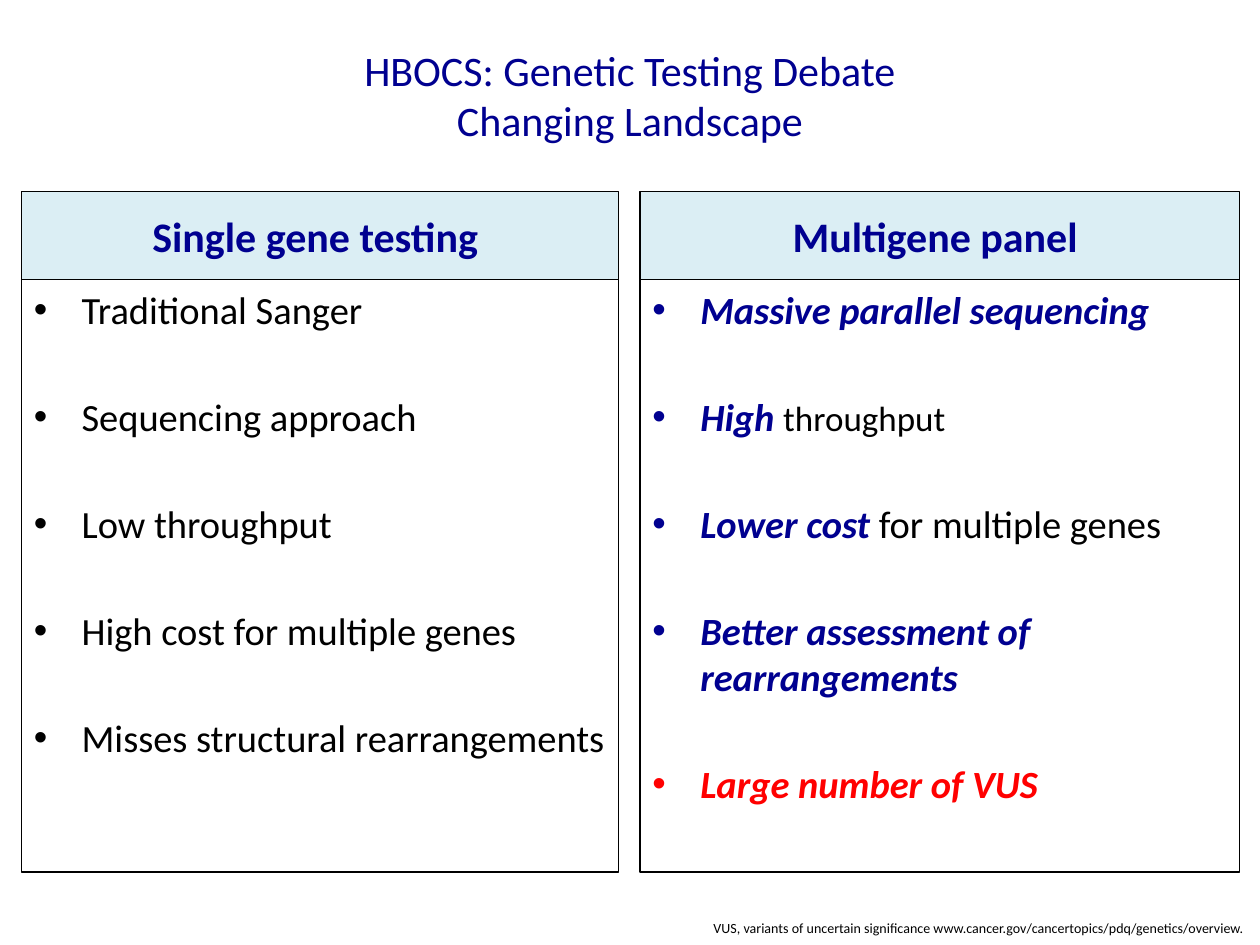
from dataclasses import dataclass

from lxml.etree import SubElement
from pptx import Presentation
from pptx.dml.color import RGBColor
from pptx.enum.shapes import MSO_SHAPE
from pptx.enum.text import MSO_ANCHOR, PP_ALIGN
from pptx.oxml.ns import qn
from pptx.util import Emu, Inches, Pt

NAVY, BLACK, RED, PALE = "000090", "000000", "FF0000", "DBEEF4"
FONT = "Calibri"
INDENT = Inches(0.38)
BULLET_GAP = Pt(34.8)


@dataclass(frozen=True)
class Area:
    """A rectangle in percent of the slide's width and height."""
    left: float
    top: float
    width: float
    height: float


@dataclass(frozen=True)
class Span:
    text: str
    color: str = BLACK
    size: float = 22
    strong: bool = False


@dataclass(frozen=True)
class Column:
    heading: str
    left: float
    width: float
    bullets: tuple[tuple[Span, ...], ...]


def strong(text: str, color: str = NAVY) -> Span:
    return Span(text, color, strong=True)


COLUMNS = (
    Column("Single gene testing ", 1.7, 47.4, (
        (Span("Traditional Sanger"),),
        (Span("Sequencing approach"),),
        (Span("Low throughput"),),
        (Span("High cost for multiple genes"),),
        (Span("Misses structural rearrangements"),),
    )),
    Column("Multigene panel ", 50.8, 47.6, (
        (strong("Massive parallel sequencing"),),
        (strong("High "), Span("throughput", size=20)),
        (strong("Lower cost "), Span("for multiple genes")),
        (strong("Better assessment of rearrangements"),),
        (strong("Large number of VUS", RED),),
    )),
)
HEADING_TOP, HEADING_HEIGHT, BODY_HEIGHT = 20.27, 9.33, 62.67

deck = Presentation()
deck.slide_width, deck.slide_height = Inches(10), Inches(7.5)
page = deck.slides.add_slide(deck.slide_layouts[6])


def rgb(color: str) -> RGBColor:
    return RGBColor.from_string(color)


def place(area: Area) -> tuple[Emu, ...]:
    across, down = deck.slide_width / 100, deck.slide_height / 100
    return (Emu(round(area.left * across)), Emu(round(area.top * down)),
            Emu(round(area.width * across)), Emu(round(area.height * down)))


def style(font, size: float, color: str, bold: bool = False, italic: bool = False) -> None:
    font.name, font.size, font.bold, font.italic = FONT, Pt(size), bold, italic
    font.color.rgb = rgb(color)


def add_line(box, text: str, size: float, color: str, align: PP_ALIGN, bold: bool = False) -> None:
    para = box.text_frame.paragraphs[0]
    para.text, para.alignment = text, align
    style(para.font, size, color, bold)


def add_text(area: Area, anchor: MSO_ANCHOR):
    box = page.shapes.add_textbox(*place(area))
    box.text_frame.word_wrap = True
    box.text_frame.vertical_anchor = anchor
    return box


def add_panel(area: Area, anchor: MSO_ANCHOR, fill: str | None = None):
    box = page.shapes.add_shape(MSO_SHAPE.RECTANGLE, *place(area))
    box.shadow.inherit = False
    if fill:
        box.fill.solid()
        box.fill.fore_color.rgb = rgb(fill)
    else:
        box.fill.background()
    box.line.color.rgb = rgb(BLACK)
    box.line.width = Pt(0.75)
    box.text_frame.word_wrap = True
    box.text_frame.vertical_anchor = anchor
    return box


def add_bullet(para, spans: tuple[Span, ...]) -> None:
    props = para._p.get_or_add_pPr()
    props.set("marL", str(INDENT))
    props.set("indent", str(-INDENT))
    bullet_color = SubElement(props, qn("a:buClr"))
    SubElement(bullet_color, qn("a:srgbClr"), val=spans[0].color)
    SubElement(props, qn("a:buFont"), typeface="Arial")
    SubElement(props, qn("a:buChar"), char="•")
    para.alignment = PP_ALIGN.LEFT
    for span in spans:
        run = para.add_run()
        run.text = span.text
        font = para.font if len(spans) == 1 else run.font
        style(font, span.size, span.color, span.strong, span.strong)


def add_column(column: Column) -> None:
    heading = add_panel(Area(column.left, HEADING_TOP, column.width, HEADING_HEIGHT),
                        MSO_ANCHOR.MIDDLE, PALE)
    add_line(heading, column.heading, 24, NAVY, PP_ALIGN.CENTER, bold=True)

    body = add_panel(Area(column.left, HEADING_TOP + HEADING_HEIGHT, column.width, BODY_HEIGHT),
                     MSO_ANCHOR.TOP)
    frame = body.text_frame
    for index, spans in enumerate(column.bullets):
        para = frame.add_paragraph() if index else frame.paragraphs[0]
        add_bullet(para, spans)
        if index:
            para.space_before = BULLET_GAP


# Title
title = add_text(Area(5, 4, 90, 12), MSO_ANCHOR.MIDDLE)
add_line(title, "HBOCS: Genetic Testing Debate\vChanging Landscape", 24, NAVY, PP_ALIGN.CENTER)

# Comparison columns
for column in COLUMNS:
    add_column(column)

# Footnote
footnote = add_text(Area(53.1, 96.67, 46.9, 3.2), MSO_ANCHOR.TOP)
add_line(footnote, "VUS, variants of uncertain significance "
         "www.cancer.gov/cancertopics/pdq/genetics/overview. ", 8, BLACK, PP_ALIGN.RIGHT)

deck.save("out.pptx")
